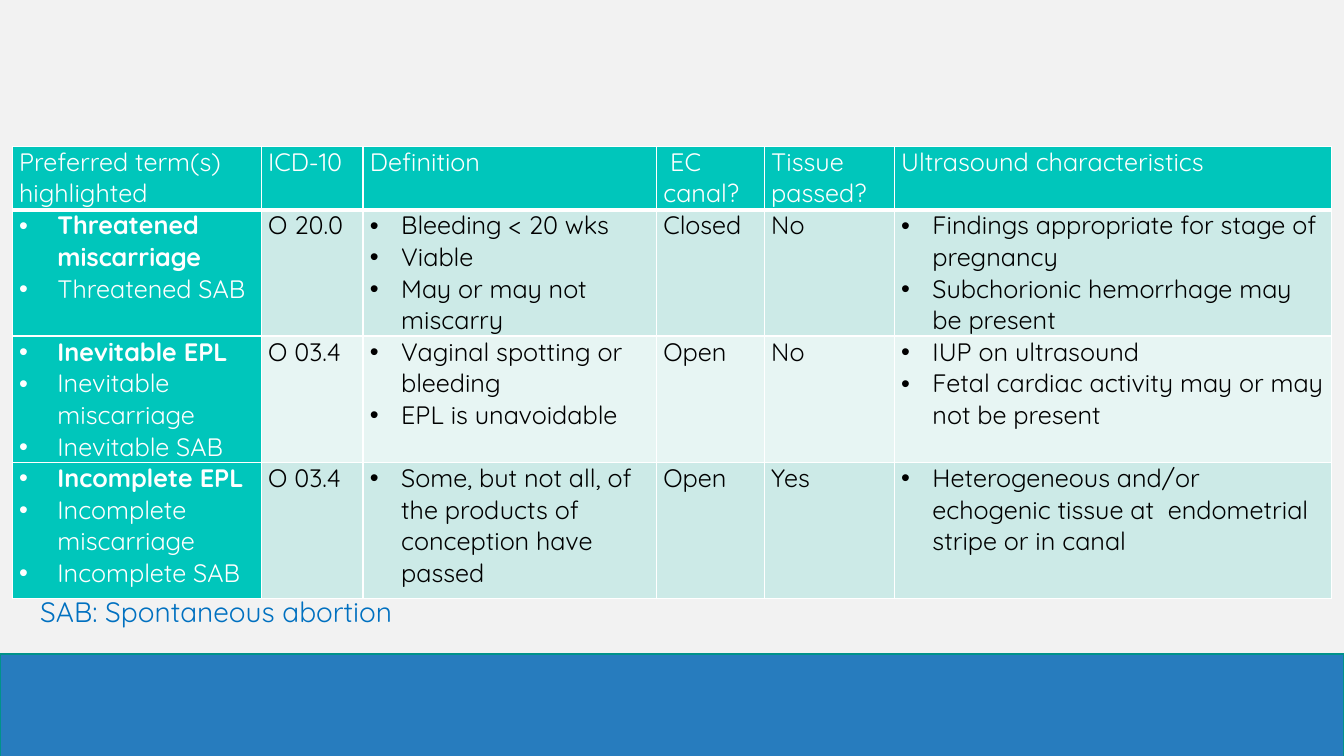
from dataclasses import dataclass
from typing import Optional

from lxml.etree import SubElement as add_element
from pptx import Presentation
from pptx.dml.color import RGBColor
from pptx.enum.shapes import MSO_SHAPE as Preset
from pptx.enum.text import MSO_AUTO_SIZE as AutoSize
from pptx.oxml.ns import qn
from pptx.util import Inches, Pt

FONT = "Quicksand"
PAPER = RGBColor(0xF2, 0xF2, 0xF2)
BAND_BLUE = RGBColor(0x27, 0x7C, 0xBE)
BAND_EDGE = RGBColor(0x00, 0x92, 0x8A)
TEAL = RGBColor(0x00, 0xC6, 0xBB)
MINT = RGBColor(0xCC, 0xEA, 0xE7)
PALE_MINT = RGBColor(0xE7, 0xF5, 0xF3)
NOTE_BLUE = RGBColor(0x00, 0x70, 0xC0)
WHITE = RGBColor(0xFF, 0xFF, 0xFF)
BLACK = RGBColor(0x00, 0x00, 0x00)

# The slide is a fine grid of square units
UNIT = Inches(0.01)
SLIDE_COLUMNS, SLIDE_ROWS = 1333, 750
COLUMN_UNITS = (247, 101, 291, 107, 129, 434)
HEADER_UNITS = 63
ROW_UNITS = (125, 125, 135)
TERM_INDENT, LIST_INDENT = 38, 31


@dataclass(frozen=True)
class Area:
    left: int
    top: int
    width: int
    height: int

    def lengths(self) -> tuple:
        return tuple(UNIT * n for n in (self.left, self.top, self.width, self.height))


@dataclass(frozen=True)
class Diagnosis:
    terms: tuple
    code: str
    definition: tuple
    canal: str
    tissue: str
    ultrasound: tuple


@dataclass(frozen=True)
class CellStyle:
    fill: RGBColor
    color: RGBColor
    indent: Optional[int] = None
    bold_first: bool = False
    bottom_line: float = 1


HEADINGS = (
    ("Preferred term(s) highlighted",), ("ICD-10",), ("Definition",),
    (" EC canal?",), ("Tissue", "passed?"), ("Ultrasound characteristics",),
)
DIAGNOSES = (
    Diagnosis(
        ("Threatened miscarriage", "Threatened SAB"), "O 20.0",
        ("Bleeding < 20 wks", "Viable", "May or may not miscarry"), "Closed", "No",
        ("Findings appropriate for stage of pregnancy",
         "Subchorionic hemorrhage may be present"),
    ),
    Diagnosis(
        ("Inevitable EPL", "Inevitable miscarriage", "Inevitable SAB"), "O 03.4",
        ("Vaginal spotting or bleeding", "EPL is unavoidable"), "Open", "No",
        ("IUP on ultrasound", "Fetal cardiac activity may or may not be present"),
    ),
    Diagnosis(
        ("Incomplete EPL", "Incomplete miscarriage", "Incomplete SAB"), "O 03.4",
        ("Some, but not all, of the products of conception have passed",), "Open", "Yes",
        ("Heterogeneous and/or echogenic tissue at  endometrial stripe or in canal",),
    ),
)


def style_font(font, size: int, color: RGBColor, bold: bool = False) -> None:
    font.name = FONT
    font.size = Pt(size)
    font.bold = bold
    font.color.rgb = color


def add_bullet(para, indent: int) -> None:
    properties = para._p.get_or_add_pPr()
    properties.set("marL", str(UNIT * indent))
    properties.set("indent", str(-UNIT * indent))
    add_element(properties, qn("a:buFont"), typeface="Arial")
    add_element(properties, qn("a:buChar"), char="•")


def add_borders(cell, bottom_line: float) -> None:
    properties = cell._tc.get_or_add_tcPr()
    for side, width in (("L", 1), ("R", 1), ("T", 1), ("B", bottom_line)):
        line = add_element(properties, qn(f"a:ln{side}"), w=str(Pt(width)))
        solid = add_element(line, qn("a:solidFill"))
        add_element(solid, qn("a:srgbClr"), val=str(WHITE))


def fill_cell(cell, lines: tuple, style: CellStyle) -> None:
    cell.margin_left = cell.margin_right = UNIT * 7
    cell.margin_top = cell.margin_bottom = 0
    add_borders(cell, style.bottom_line)
    cell.fill.solid()
    cell.fill.fore_color.rgb = style.fill
    cell.text_frame.text = "\n".join(lines)
    for index, para in enumerate(cell.text_frame.paragraphs):
        if style.indent is not None:
            add_bullet(para, style.indent)
        for span in para.runs:
            style_font(span.font, 18, style.color, style.bold_first and index == 0)


def add_band(page, area: Area) -> None:
    band = page.shapes.add_shape(Preset.RECTANGLE, *area.lengths())
    band.shadow.inherit = False
    band.fill.solid()
    band.fill.fore_color.rgb = BAND_BLUE
    band.line.color.rgb = BAND_EDGE
    band.line.width = Pt(1.25)


def add_diagnosis_table(page, left: int, top: int) -> None:
    heights = (HEADER_UNITS, *ROW_UNITS)
    area = Area(left, top, sum(COLUMN_UNITS), sum(heights))
    table = page.shapes.add_table(
        len(heights), len(COLUMN_UNITS), *area.lengths()).table
    table.first_row = table.horz_banding = False
    for column, units in zip(table.columns, COLUMN_UNITS):
        column.width = UNIT * units
    for row, units in zip(table.rows, heights):
        row.height = UNIT * units

    # Header row
    header = CellStyle(TEAL, WHITE, bottom_line=3)
    for column, lines in enumerate(HEADINGS):
        fill_cell(table.cell(0, column), lines, header)

    # Diagnosis rows, in alternating tints
    term = CellStyle(TEAL, WHITE, TERM_INDENT, bold_first=True)
    for row, item in enumerate(DIAGNOSES, start=1):
        tint = MINT if row % 2 else PALE_MINT
        plain = CellStyle(tint, BLACK)
        bulleted = CellStyle(tint, BLACK, LIST_INDENT)
        entries = (
            (item.terms, term), ((item.code,), plain), (item.definition, bulleted),
            ((item.canal,), plain), ((item.tissue,), plain), (item.ultrasound, bulleted),
        )
        for column, (lines, style) in enumerate(entries):
            fill_cell(table.cell(row, column), lines, style)


def add_note(page, area: Area, text: str) -> None:
    box = page.shapes.add_textbox(*area.lengths())
    frame = box.text_frame
    frame.word_wrap = False
    frame.auto_size = AutoSize.SHAPE_TO_FIT_TEXT
    frame.text = text
    style_font(frame.paragraphs[0].runs[0].font, 20, NOTE_BLUE)


def main() -> None:
    deck = Presentation()
    deck.slide_width = UNIT * SLIDE_COLUMNS
    deck.slide_height = UNIT * SLIDE_ROWS
    page = deck.slides.add_slide(deck.slide_layouts[6])
    page.background.fill.solid()
    page.background.fill.fore_color.rgb = PAPER

    add_band(page, Area(0, 649, SLIDE_COLUMNS, 106))
    add_diagnosis_table(page, 12, 145)
    add_note(page, Area(30, 585, 389, 44), "SAB: Spontaneous abortion")
    deck.save("out.pptx")


if __name__ == "__main__":
    main()
